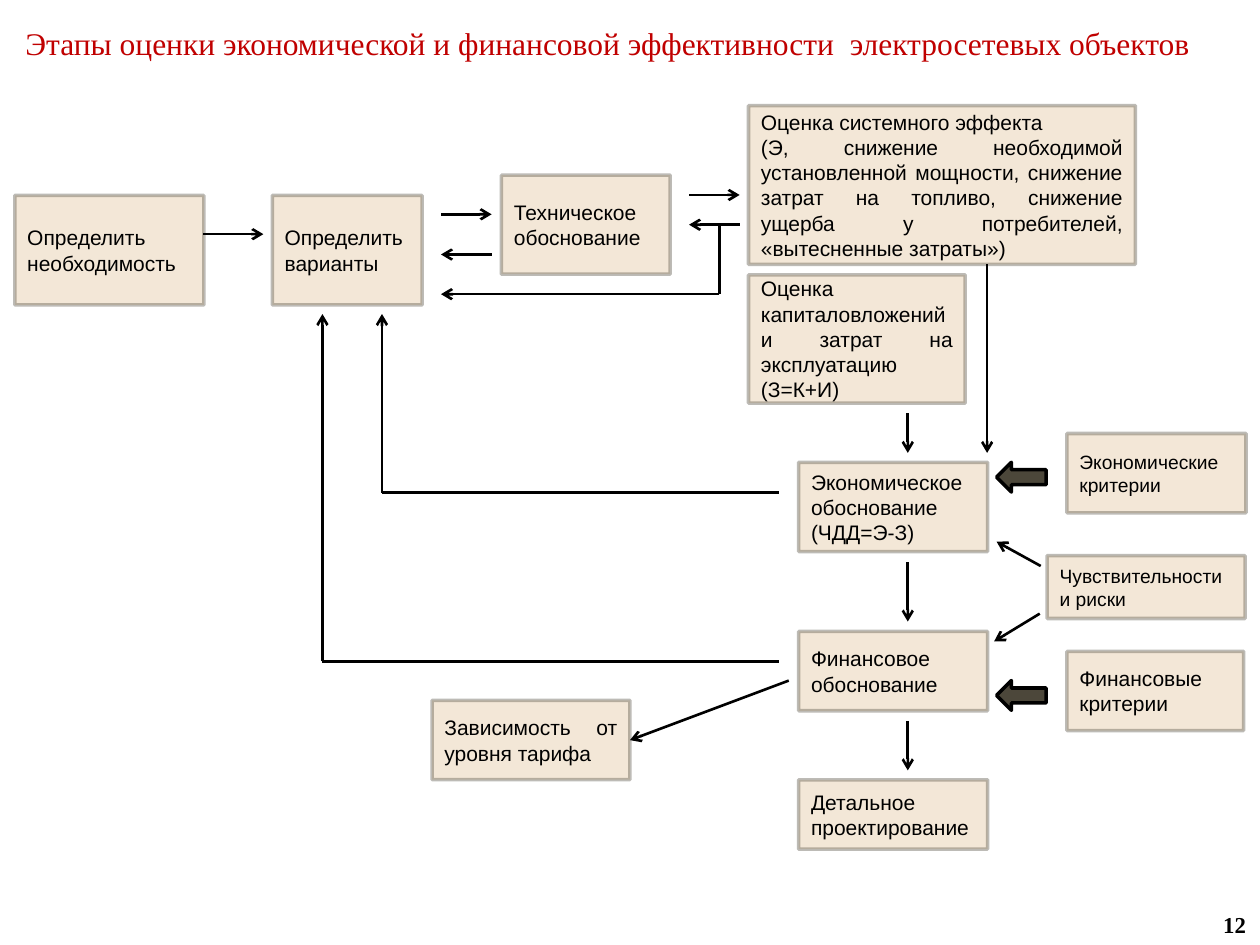
"""Builds the flowchart slide on assessing power grid projects."""
from lxml import etree
from pptx import Presentation, util as u
from pptx.dml.color import RGBColor
from pptx.enum import shapes, text
from pptx.oxml.ns import qn

INK = "000000"
SAND = "EAD3B4"
BROWN = "4C473A"

BOXES = {
    "need": (0.3, 3.94, 3.81, 2.21, 12, "Определить необходимость"),
    "system": (15.09, 2.13, 7.8, 3.2, 12,
               "Оценка системного эффекта\n(Э, снижение необходимой установленной мощности, "
               "снижение затрат на топливо, снижение ущерба у потребителей, "
               "«вытесненные затраты»)"),
    "options": (5.49, 3.94, 3.02, 2.21, 12, "Определить варианты"),
    "costs": (15.09, 5.54, 4.37, 2.59, 12,
              "Оценка капиталовложений и затрат на эксплуатацию\n(З=К+И)"),
    "technical": (10.11, 3.53, 3.4, 2, 12, "Техническое обоснование"),
    "economic": (16.1, 9.32, 3.81, 1.8, 12, "Экономическое\nобоснование\n(ЧДД=Э-З)"),
    "economic criteria": (21.51, 8.74, 3.61, 2.0 - 0.4, 11, "Экономические критерии"),
    "risks": (21.11, 11.2, 3.99, 1.27, 11, "Чувствительности\nи риски"),
    "financial criteria": (21.51, 13.13, 3.56, 1.6, 12, "Финансовые критерии"),
    "financial": (16.1, 12.73, 3.81, 1.6, 12, "Финансовое обоснование"),
    "design": (16.1, 15.72, 3.81, 1.4, 12, "Детальное проектирование"),
    "tariff": (8.71, 14.12, 3.99, 1.6, 12, "Зависимость от уровня тарифа"),
}

ARROWS = [
    (4.1, 4.72, 5.31, 4.72),
    (8.89, 4.32, 9.91, 4.32),
    (9.91, 5.13, 8.89, 5.13),
    (13.89, 3.93, 14.91, 3.93),
    (14.91, 4.53, 13.89, 4.53),
    (14.5, 5.93, 8.89, 5.93),
    (18.3, 8.33, 18.3, 9.13),
    (19.9, 5.33, 19.9, 9.13),
    (20.98, 11.41, 20.09, 10.92),
    (20.96, 12.37, 20.04, 12.93),
    (18.3, 11.33, 18.3, 12.53),
    (18.3, 14.53, 18.3, 15.53),
    (7.7, 9.93, 7.7, 6.33),
    (6.5, 13.33, 6.5, 6.33),
]

PLAIN_LINES = [
    (14.5, 4.53, 14.5, 5.93),
    (15.7, 9.93, 7.7, 9.93),
    (15.7, 13.33, 6.5, 13.33),
]


def paint(color_format, color, alpha=None):
    """Set a solid fill's colour and, if given, its opacity in percent."""
    color_format.solid()
    color_format.fore_color.rgb = RGBColor.from_string(color)
    if alpha is not None:
        element = color_format._xPr.find(qn("a:solidFill"))[0]
        etree.SubElement(element, qn("a:alpha"), val=str(alpha * 1000))


def write(shape, content, size, font, color, align, bold=False):
    """Put text in a shape and format all of its runs."""
    frame = shape.text_frame
    frame.word_wrap = True
    frame.text = content
    for paragraph in frame.paragraphs:
        paragraph.alignment = align
        for run in paragraph.runs:
            run.font.size = u.Pt(size)
            run.font.name = font
            run.font.bold = bold
            run.font.color.rgb = RGBColor.from_string(color)


def add_label(slide, place, content, size, color, align, anchor, bold=False):
    """Add a text box in the heading font."""
    shape = slide.shapes.add_textbox(*map(u.Cm, place))
    write(shape, content, size, "Times New Roman", color, align, bold)
    shape.text_frame.vertical_anchor = anchor


def add_figure(slide, kind, place, fill, line, fill_alpha=None, line_alpha=None):
    """Add a filled and outlined preset shape without a shadow."""
    shape = slide.shapes.add_shape(kind, *map(u.Cm, place))
    shape.shadow.inherit = False
    paint(shape.fill, fill, fill_alpha)
    paint(shape.line.fill, line, line_alpha)
    shape.line.width = u.Pt(2)
    return shape


def add_box(slide, left, top, width, height, size, content):
    """Add a step of the flowchart."""
    shape = add_figure(slide, shapes.MSO_SHAPE.RECTANGLE, (left, top, width, height),
                       SAND, BROWN, 53, 36)
    write(shape, content, size, "Arial", INK, text.PP_ALIGN.JUSTIFY)
    shape.text_frame.vertical_anchor = text.MSO_ANCHOR.MIDDLE
    return shape


def add_line(slide, ends, arrow=True):
    """Add a straight black line, with an arrowhead at its end if wanted."""
    line = slide.shapes.add_connector(shapes.MSO_CONNECTOR.STRAIGHT, *map(u.Cm, ends))
    line.line.width = u.Pt(1.5)
    paint(line.line.fill, INK)
    if arrow:
        etree.SubElement(line.line._get_or_add_ln(), qn("a:tailEnd"), type="arrow")
    etree.SubElement(line._element.spPr, qn("a:effectLst"))
    return line


def main():
    """Build and save the slide."""
    presentation = Presentation()
    presentation.slide_width, presentation.slide_height = u.Cm(25.4), u.Cm(19.05)
    slide = presentation.slides.add_slide(presentation.slide_layouts[6])

    add_label(slide, (0, 0, 24.51, 1.73),
              "Этапы оценки экономической и финансовой эффективности  электросетевых объектов",
              18, "C00000", text.PP_ALIGN.CENTER, text.MSO_ANCHOR.MIDDLE)
    boxes = {name: add_box(slide, *values) for name, values in BOXES.items()}
    for ends in ARROWS:
        add_line(slide, ends)
    for ends in PLAIN_LINES:
        add_line(slide, ends, arrow=False)
    add_line(slide, (15.9, 13.72, 12.7, 14.92)).end_connect(boxes["tariff"], 3)
    for top in (9.32, 13.72):
        add_figure(slide, shapes.MSO_SHAPE.LEFT_ARROW, (20.09, top, 1, 0.6), BROWN, INK)
    add_label(slide, (24.41, 18.24, 0.99, 0.81), "12", 13, INK,
              text.PP_ALIGN.LEFT, text.MSO_ANCHOR.TOP, bold=True)

    presentation.save("out.pptx")


if __name__ == "__main__":
    main()
